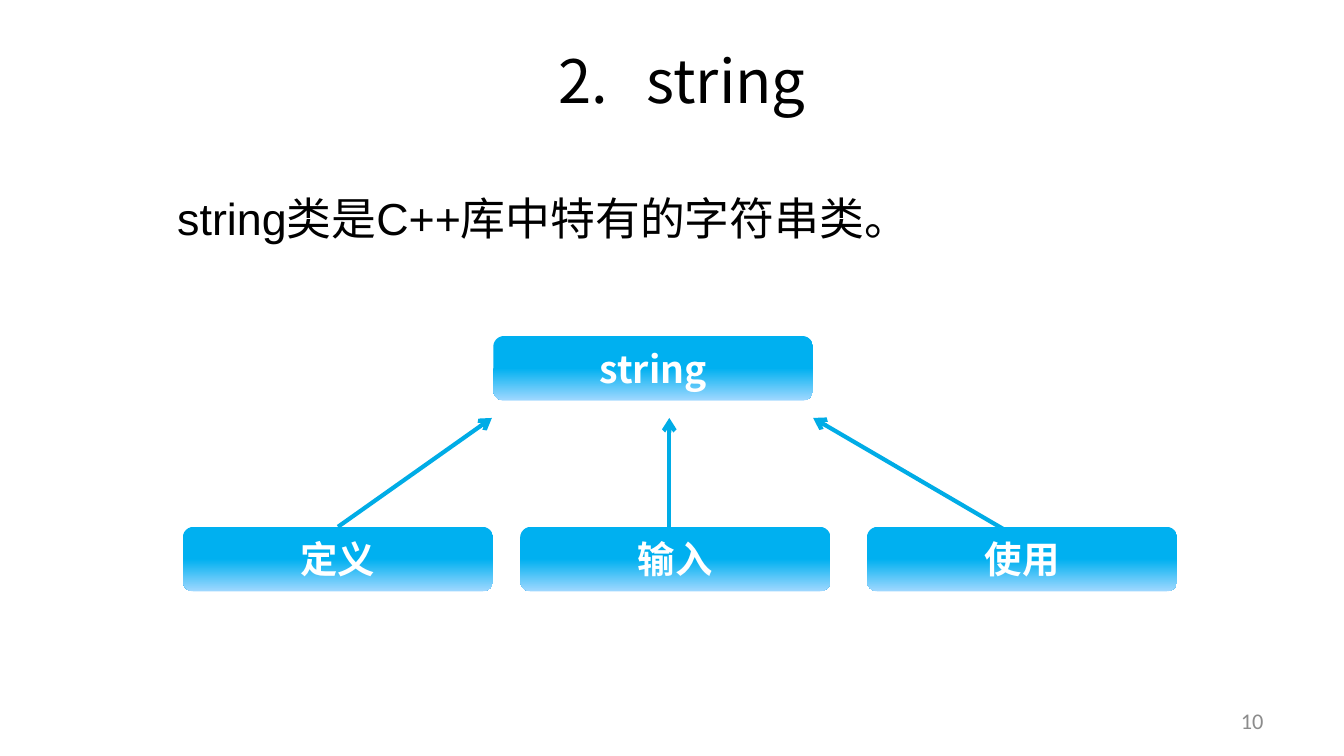
from lxml import etree
from pptx import Presentation
from pptx.dml.color import RGBColor
from pptx.enum import shapes, text
from pptx.oxml import ns
from pptx.util import Inches, Pt

SANS = "Noto Sans CJK SC"
SLIDE_WIDTH = 10
BOX_TOP, BOX_WIDTH, BOX_HEIGHT = 3.92, 2.31, 0.48
ARROW_TOP = 3.11
GRADIENT = [(0, "00B0F0"), (50, "00B0F0"), (100, "9FD8FF")]


def color(value):
    return RGBColor.from_string(value)


def add_child(parent, tag, **attributes):
    return etree.SubElement(parent, ns.qn(tag), attributes)


def write(shape, content, size=20, font=SANS, fill="000000", bold=False,
          align=text.PP_ALIGN.LEFT, anchor=text.MSO_ANCHOR.TOP,
          line_spacing=None, number=None, grow=True):
    frame = shape.text_frame
    frame.word_wrap = True
    frame.vertical_anchor = anchor
    if grow:
        frame.auto_size = text.MSO_AUTO_SIZE.SHAPE_TO_FIT_TEXT
    paragraph = frame.paragraphs[0]
    paragraph.alignment = align
    if line_spacing:
        paragraph.line_spacing = line_spacing
    if number:
        properties = paragraph._p.get_or_add_pPr()
        properties.set("marL", str(Inches(0.56)))
        properties.set("indent", str(Inches(-0.56)))
        add_child(properties, "a:buFont", typeface="+mj-lt")
        add_child(properties, "a:buAutoNum", type="arabicPeriod", startAt=str(number))
    run = paragraph.add_run()
    run.text = content
    run.font.size = Pt(size)
    run.font.bold = bold
    run.font.color.rgb = color(fill)
    run.font.name = font
    # Chinese characters take the East Asian typeface
    add_child(run._r.get_or_add_rPr(), "a:ea", typeface=SANS)


def add_text(slide, left, top, width, height, content, **style):
    box = slide.shapes.add_textbox(
        Inches(left), Inches(top), Inches(width), Inches(height))
    write(box, content, **style)


def add_box(slide, left, top, width, label):
    box = slide.shapes.add_shape(
        shapes.MSO_SHAPE.ROUNDED_RECTANGLE,
        Inches(left), Inches(top), Inches(width), Inches(BOX_HEIGHT))
    box.shadow.inherit = False
    box.line.fill.background()
    # Vertical three-stop gradient
    box.fill.gradient()
    box.fill.gradient_angle = 270
    stops = box._element.spPr.find(ns.qn("a:gradFill")).find(ns.qn("a:gsLst"))
    for stop in list(stops):
        stops.remove(stop)
    for position, value in GRADIENT:
        stop = add_child(stops, "a:gs", pos=str(position * 1000))
        add_child(stop, "a:srgbClr", val=value)
    write(box, label, fill="FFFFFF", bold=True, align=text.PP_ALIGN.CENTER)
    return box


def add_arrow(slide, start, end, source=None):
    arrow = slide.shapes.add_connector(
        shapes.MSO_CONNECTOR.STRAIGHT, *(Inches(value) for value in start + end))
    if source is not None:
        arrow.begin_connect(source, 0)
    arrow.line.color.rgb = color("00ACE6")
    arrow.line.width = Pt(2.25)
    add_child(arrow.line._get_or_add_ln(), "a:tailEnd", type="arrow")
    add_child(arrow._element.spPr, "a:effectLst")


def main():
    deck = Presentation()
    deck.slide_width = Inches(SLIDE_WIDTH)
    deck.slide_height = Inches(SLIDE_WIDTH * 9 / 16)
    slide = deck.slides.add_slide(deck.slide_layouts[6])

    # Page number, statement and title
    add_text(slide, 7.17, 5.21, 2.33, 0.3, "10", size=12, font="Calibri",
             fill="8C8C8C", align=text.PP_ALIGN.RIGHT,
             anchor=text.MSO_ANCHOR.MIDDLE, grow=False)
    add_text(slide, 1.22, 1.17, 7.09, 0.64, "string类是C++库中特有的字符串类。",
             size=24, font="Arial", line_spacing=1.5)
    add_text(slide, 1.11, 0.28, 7.93, 0.64, " string", size=32,
             align=text.PP_ALIGN.CENTER, number=2)

    # The right arrow starts behind its box
    add_arrow(slide, (7.66, 4.05), (6.05, ARROW_TOP))

    # Topic and its three aspects
    add_box(slide, 3.67, 2.5, 2.38, "string")
    definition, _, _ = [
        add_box(slide, left, BOX_TOP, BOX_WIDTH, label)
        for left, label in [(1.36, "定义"), (3.87, "输入"), (6.45, "使用")]]

    # Left and middle arrows
    add_arrow(slide, (2.51, BOX_TOP), (3.66, ARROW_TOP), source=definition)
    add_arrow(slide, (4.98, BOX_TOP), (4.98, ARROW_TOP))

    deck.save("out.pptx")


if __name__ == "__main__":
    main()
